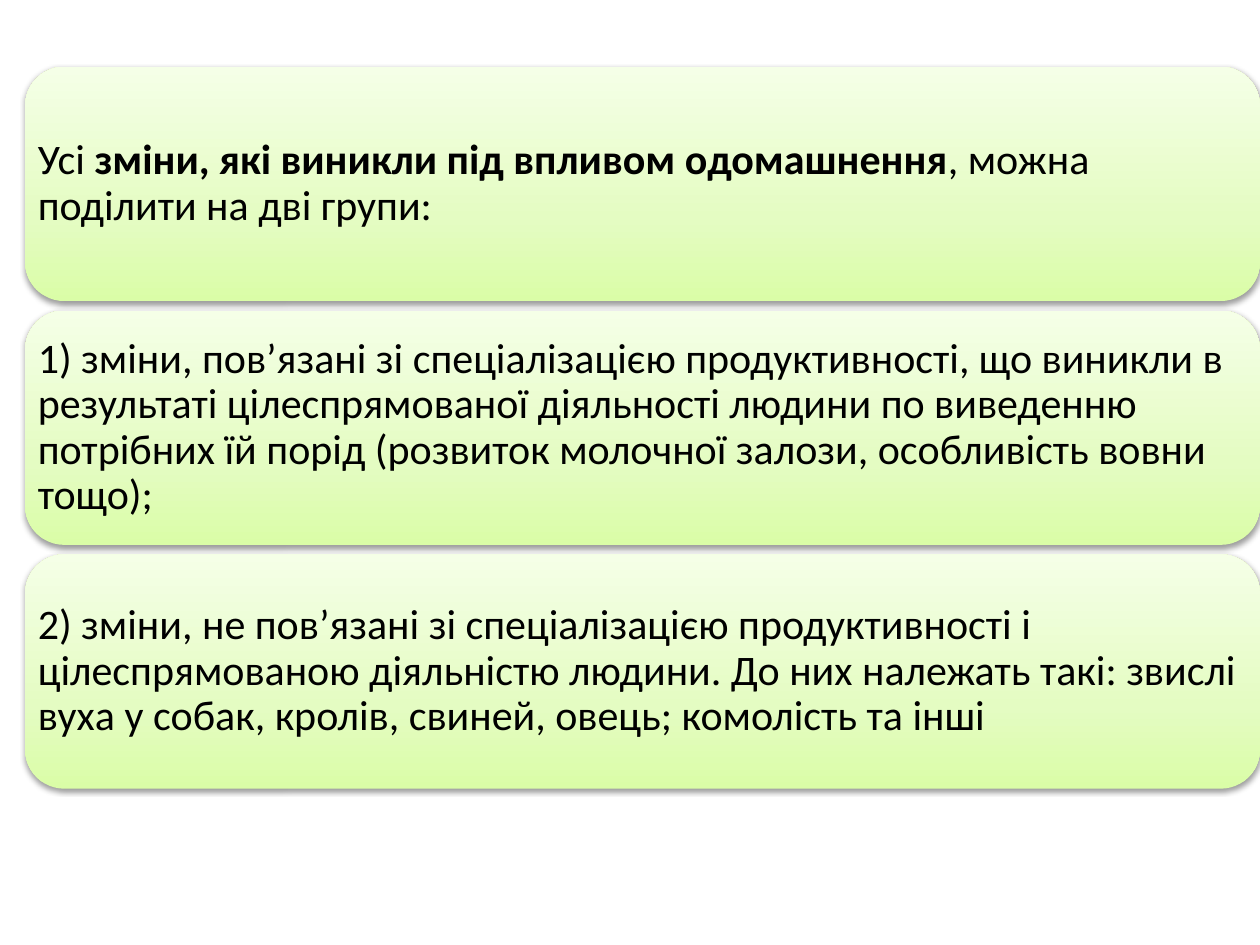
import copy
import pptx
import pptx.util
import pptx.dml.color
import pptx.enum.shapes
import pptx.enum.text
import pptx.oxml
import pptx.oxml.ns

COLORS = {"text": "000000", "bottom": "DAFDA7", "middle": "E4FCC2", "top": "F5FFE7"}
STOPS = [(0, "bottom"), (0.35, "middle"), (1, "top")]

# Each card is a list of (text, bold) runs
CARDS = [
    [("Усі ", False),
     ("зміни, які виникли під впливом одомашнення", True),
     (", можна поділити на дві групи:", False)],
    [("1) зміни, пов’язані зі спеціалізацією продуктивності, що виникли в "
      "результаті цілеспрямованої діяльності людини по виведенню потрібних їй "
      "порід (розвиток молочної залози, особливість вовни тощо);", False)],
    [("2) зміни, не пов’язані зі спеціалізацією продуктивності і "
      "цілеспрямованою діяльністю людини. До них належать такі: звислі вуха у "
      "собак, кролів, свиней, овець; комолість та інші", False)],
]

SHADOW = (
    f'<a:effectLst {pptx.oxml.ns.nsdecls("a")}>'
    '<a:outerShdw blurRad="40000" dist="20000" dir="5400000" rotWithShape="0">'
    '<a:srgbClr val="000000"><a:alpha val="38000"/></a:srgbClr>'
    '</a:outerShdw></a:effectLst>'
)


def rgb(name):
    return pptx.dml.color.RGBColor.from_string(COLORS[name])


prs = pptx.Presentation()
prs.slide_width = pptx.util.Inches(10)
prs.slide_height = pptx.util.Inches(7.5)
s = prs.slides.add_slide(prs.slide_layouts[6])

# One column of equal rows, flush with the right edge
left = pptx.util.Inches(0.2)
top = pptx.util.Inches(0.53)
height = pptx.util.Inches(1.86)
pitch = pptx.util.Inches(1.935)
width = prs.slide_width - left

for row, runs in enumerate(CARDS):
    sp = s.shapes.add_shape(pptx.enum.shapes.MSO_SHAPE.ROUNDED_RECTANGLE,
                            left, top + row * pitch, width, height)
    sp.line.fill.background()

    # Three-stop gradient running from bottom to top
    sp.fill.gradient()
    sp.fill.gradient_angle = 90
    stop_list = sp.fill._fill._gradFill.gsLst
    stop_list.append(copy.deepcopy(stop_list[-1]))
    for stop, (position, name) in zip(sp.fill.gradient_stops, STOPS):
        stop.position = position
        stop.color.rgb = rgb(name)

    # Soft shadow below the card
    sp._element.spPr.append(pptx.oxml.parse_xml(SHADOW))

    # Text; the rounded corners already inset it
    tf = sp.text_frame
    tf.word_wrap = True
    tf.vertical_anchor = pptx.enum.text.MSO_ANCHOR.MIDDLE
    tf.margin_left = tf.margin_right = pptx.util.Inches(0.01)
    tf.margin_top = tf.margin_bottom = pptx.util.Inches(0.01)
    p = tf.paragraphs[0]
    p.alignment = pptx.enum.text.PP_ALIGN.LEFT
    p.line_spacing = 0.9
    for text, bold in runs:
        r = p.add_run()
        r.text = text
        r.font.name = "Calibri"
        r.font.size = pptx.util.Pt(24)
        r.font.bold = bold
        r.font.color.rgb = rgb("text")

prs.save("out.pptx")
